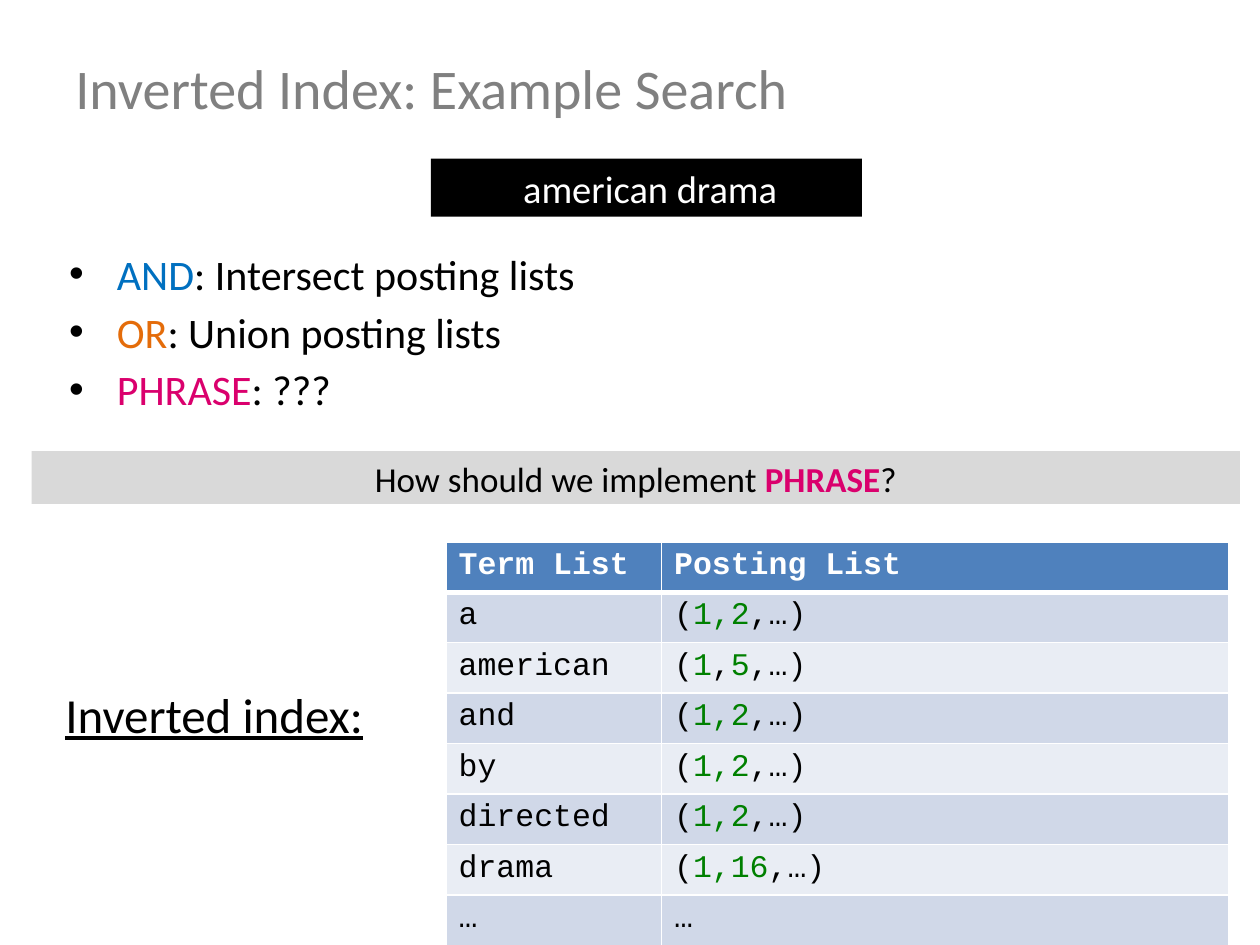
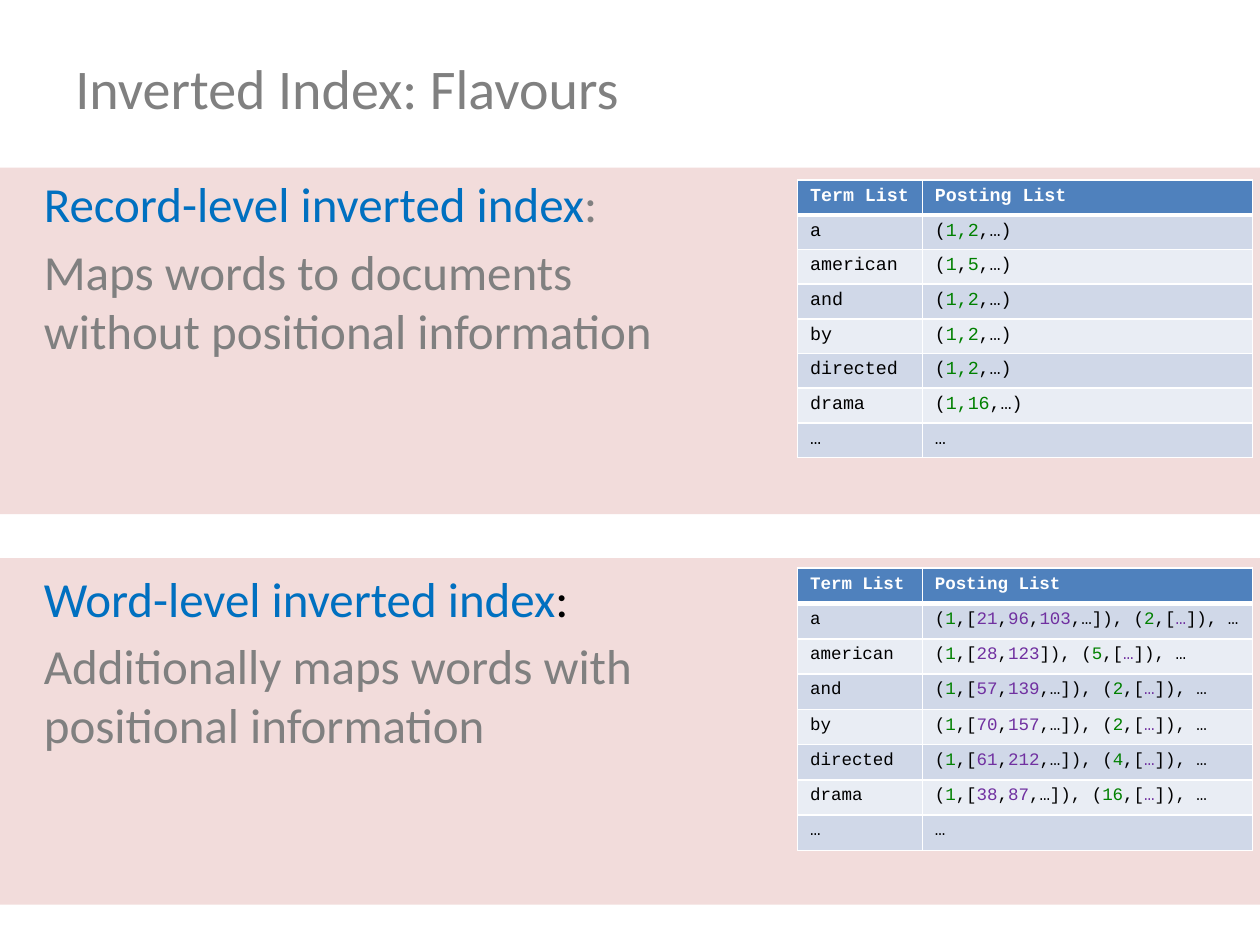
from pptx import Presentation
from pptx.dml.color import RGBColor as RGB
from pptx.enum.shapes import MSO_SHAPE as SHAPE
from pptx.enum.text import MSO_ANCHOR as ANCHOR, PP_ALIGN as ALIGN
from pptx.oxml.ns import qn
from pptx.util import Inches, Pt
from lxml.etree import SubElement

BLACK, WHITE, GREY = "000000", "FFFFFF", "808080"
BLUE, ORANGE, PINK = "0070C0", "E46C0A", "DA006D"
GREEN, PURPLE = "008000", "7030A0"
HEAD_FILL, ROW_FILLS = "4F81BD", ("D0D8E8", "E9EDF4")
SANS, MONO = "Calibri", "Courier New"

HEADERS = ("Term List", "Posting List")
RECORDS = [
    ("a", ["1,2"]),
    ("american", ["1", "5"]),
    ("and", ["1,2"]),
    ("by", ["1,2"]),
    ("directed", ["1,2"]),
    ("drama", ["1,16"]),
]
WORDS = [
    ("a", "1", ["21", "96", "103"], ",…", "2"),
    ("american", "1", ["28", "123"], "", "5"),
    ("and", "1", ["57", "139"], ",…", "2"),
    ("by", "1", ["70", "157"], ",…", "2"),
    ("directed", "1", ["61", "212"], ",…", "4"),
    ("drama", "1", ["38", "87"], ",…", "16"),
]
SEARCH_TITLE = "Inverted Index: Example Search"
QUERY = [[("american drama", WHITE)]]
OPERATORS = [
    [("AND", BLUE), (": Intersect posting lists", BLACK)],
    [("OR", ORANGE), (": Union posting lists", BLACK)],
    [("PHRASE", PINK), (": ???", BLACK)],
]
QUESTION = [[("How should we implement ", BLACK),
             ("PHRASE", PINK, {"bold": True}), ("?", BLACK)]]
INDEX_LABEL = [[("Inverted index:", BLACK, {"underline": True})]]
FLAVOURS_TITLE = "Inverted Index: Flavours"
RECORD_TEXT = [
    [("Record-level inverted index", BLUE), (":", GREY)],
    [("Maps words to documents without positional information", GREY)],
]
WORD_TEXT = [
    [("Word-level inverted index", BLUE), (":", BLACK)],
    [("Additionally maps words with positional information", GREY)],
]


def rgb(color):
    """Turn a hex string into a colour."""
    return RGB.from_string(color)


def joined(parts, color):
    """Return coloured runs with black commas between them."""
    runs = []
    for part in parts:
        runs += [(",", BLACK), (part, color)]
    return runs[1:]


def record_rows():
    """Return the table rows of the record-level index."""
    rows = [([(term, BLACK)],
             [("(", BLACK), *joined(docs, GREEN), (",…)", BLACK)])
            for term, docs in RECORDS]
    return rows + [([("…", BLACK)],) * 2]


def word_rows():
    """Return the table rows of the word-level index."""
    rows = [([(term, BLACK)],
             [("(", BLACK), (doc, GREEN), (",[", BLACK),
              *joined(positions, PURPLE), (more + "]), (", BLACK),
              (next_doc, GREEN), (",[", BLACK), ("…", PURPLE),
              ("]), …", BLACK)])
            for term, doc, positions, more, next_doc in WORDS]
    return rows + [([("…", BLACK)],) * 2]


def add_runs(p, runs, **base):
    """Write (text, colour, format) runs into a paragraph."""
    for text, color, *extra in runs:
        r = p.add_run()
        r.text = text
        r.font.color.rgb = rgb(color)
        for name, value in {**base, **(extra[0] if extra else {})}.items():
            setattr(r.font, name, value)


def write(sp, paragraphs, size, align=ALIGN.LEFT, anchor=ANCHOR.TOP, margin=0, bullet=False):
    """Fill a shape with paragraphs of runs."""
    tf = sp.text_frame
    tf.word_wrap, tf.vertical_anchor = True, anchor
    for i, runs in enumerate(paragraphs):
        p = tf.add_paragraph() if i else tf.paragraphs[0]
        p.alignment = align
        if i:
            p.space_before = Pt(round(size * 0.18, 1))
        ppr = p._p.get_or_add_pPr()
        if margin:
            ppr.set("marL", str(Inches(margin)))
        if bullet:
            ppr.set("indent", str(-Inches(margin)))
            color = SubElement(ppr, qn("a:buClr"))
            SubElement(color, qn("a:srgbClr"), val=BLACK)
            SubElement(ppr, qn("a:buFont"), typeface="Arial")
            SubElement(ppr, qn("a:buChar"), char="•")
        add_runs(p, runs, name=SANS, size=Pt(size))


def add_text(s, box, paragraphs, size, **layout):
    """Add a text box."""
    write(s.shapes.add_textbox(*map(Inches, box)), paragraphs, size, **layout)


def add_band(s, box, fill):
    """Add a plain filled rectangle."""
    sp = s.shapes.add_shape(SHAPE.RECTANGLE, *map(Inches, box))
    sp.shadow.inherit = False
    sp.fill.solid()
    sp.fill.fore_color.rgb = rgb(fill)
    sp.line.fill.background()
    return sp


def style_cell(cell, fill, top=1, bottom=1):
    """Give a cell white borders and a fill."""
    tcpr = cell._tc.get_or_add_tcPr()
    for tag, width in {"lnL": 1, "lnR": 1, "lnT": top, "lnB": bottom}.items():
        ln = SubElement(tcpr, qn("a:" + tag), w=str(Pt(width)))
        SubElement(SubElement(ln, qn("a:solidFill")), qn("a:srgbClr"), val=WHITE)
    cell.fill.solid()
    cell.fill.fore_color.rgb = rgb(fill)


def add_index(s, left, top, widths, row_height, rows, size):
    """Add an index table with a header row."""
    rows = [[[(head, WHITE)] for head in HEADERS], *rows]
    box = left, top, sum(widths), row_height * len(rows)
    table = s.shapes.add_table(len(rows), len(widths), *map(Inches, box)).table
    for column, width in zip(table.columns, widths):
        column.width = Inches(width)
    for i, row in enumerate(rows):
        table.rows[i].height = Inches(row_height)
        for j, runs in enumerate(row):
            cell = table.cell(i, j)
            style_cell(cell, ROW_FILLS[(i - 1) % 2] if i else HEAD_FILL,
                       top=3 if i == 1 else 1, bottom=1 if i else 3)
            add_runs(cell.text_frame.paragraphs[0], runs,
                     name=MONO, size=Pt(size), bold=i == 0)


def add_title(s, title):
    """Add the slide title."""
    add_text(s, (0.5, 0.3, 9, 0.78), [[(title, GREY)]], 32, anchor=ANCHOR.MIDDLE)


def search_slide(s):
    """Build the example search slide."""
    add_title(s, SEARCH_TITLE)
    add_text(s, (0.42, 5.38, 2.92, 0.57), INDEX_LABEL, 28)
    add_text(s, (0.45, 1.92, 9, 1.6), OPERATORS, 24, margin=0.38, bullet=True)
    query = add_band(s, (3.42, 1.26, 3.42, 0.46), BLACK)
    write(query, QUERY, 22, align=ALIGN.CENTER, margin=0.06)
    add_index(s, 3.54, 4.3, (1.71, 4.5), 0.38, record_rows(), 18)
    question = add_band(s, (0.25, 3.58, 9.59, 0.42), "D9D9D9")
    write(question, QUESTION, 20, align=ALIGN.CENTER)


def flavours_slide(s):
    """Build the slide that compares both kinds of index."""
    flavours = [
        (1.33, 1.33, 1.43, RECORD_TEXT, record_rows(), 0.27, 10.5),
        (4.43, 4.46, 4.51, WORD_TEXT, word_rows(), 0.28, 10),
    ]
    add_title(s, FLAVOURS_TITLE)
    for band_top, text_top, table_top, text, rows, row_height, size in flavours:
        add_band(s, (0, band_top, 10, 2.75), "F2DCDB")
        add_text(s, (0.25, text_top, 5.5, 2.25), text, 28)
        add_index(s, 6.33, table_top, (0.99, 2.62), row_height, rows, size)


def main():
    """Build and save the presentation."""
    prs = Presentation()
    prs.slide_width, prs.slide_height = Inches(10), Inches(7.5)
    for build in (search_slide, flavours_slide):
        build(prs.slides.add_slide(prs.slide_layouts[6]))
    prs.save("out.pptx")


if __name__ == "__main__":
    main()
